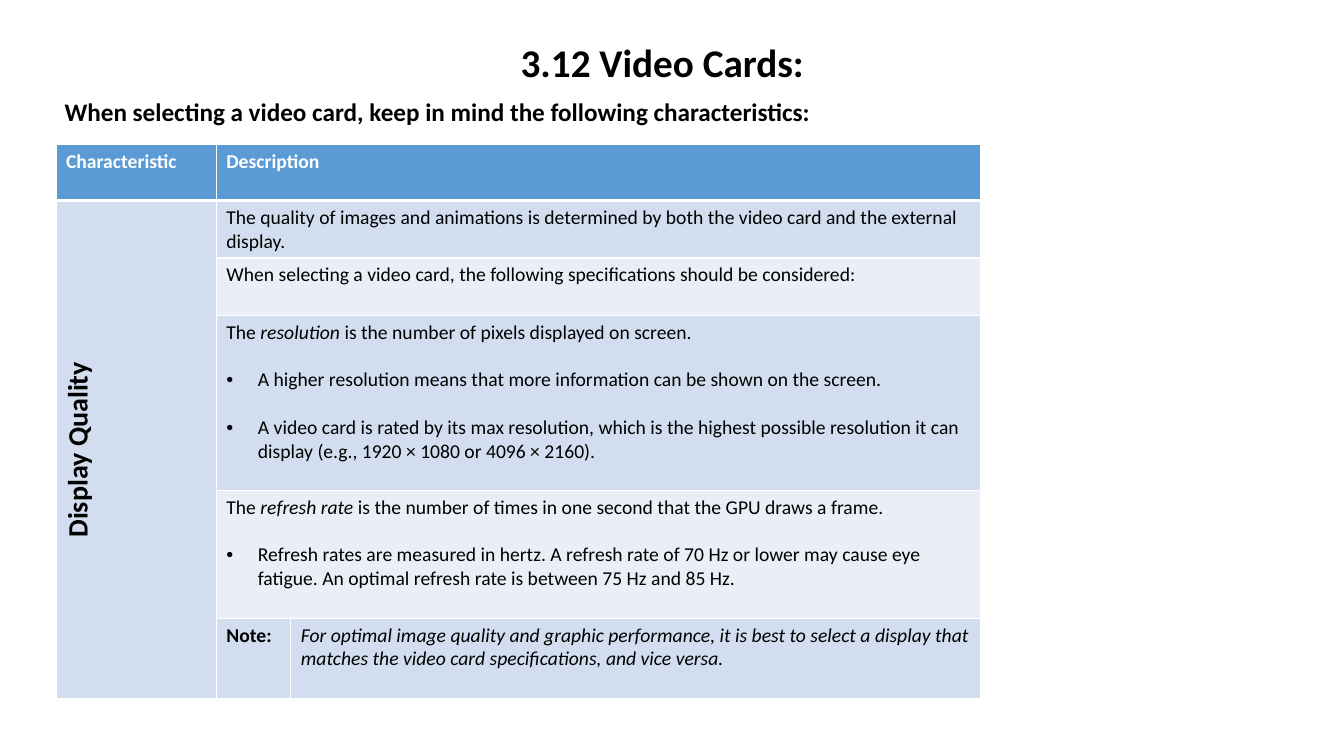
from dataclasses import dataclass

from lxml import etree
from pptx import Presentation
from pptx.dml.color import RGBColor
from pptx.enum import text as t
from pptx.oxml import ns
from pptx.util import Pt


@dataclass(frozen=True)
class Theme:
    font: str = "Calibri"
    ink: str = "000000"
    white: str = "FFFFFF"
    head: str = "5B9BD5"
    dark: str = "D2DEEF"
    light: str = "EAEFF7"
    title: int = 28
    side: int = 20
    lead: int = 18
    body: int = 14


THEME = Theme()
COLS = (114.5, 53.3, 492.7)
ROWS = (40, 41, 41, 125, 91.5, 57.5)
INDENT = 22.5
GAP = 17

# Each paragraph is a list of (text, style) runs; style holds "b" and "i".
INTRO = (
    "The quality of images and animations is determined by both the video card "
    "and the external display.",
    "When selecting a video card, the following specifications should be considered:",
)
SPECS = (
    ([("The ", ""), ("resolution", "i"),
      (" is the number of pixels displayed on screen.", "")],
     ["A higher resolution means that more information can be shown on the screen.",
      "A video card is rated by its max resolution, which is the highest possible "
      "resolution it can display (e.g., 1920 × 1080 or 4096 × 2160)."]),
    ([("The ", ""), ("refresh rate", "i"),
      (" is the number of times in one second that the GPU draws a frame.", "")],
     ["Refresh rates are measured in hertz. A refresh rate of 70 Hz or lower may "
      "cause eye fatigue. An optimal refresh rate is between 75 Hz and 85 Hz."]),
)
NOTE = ("For optimal image quality and graphic performance, it is best to select a "
        "display that matches the video card specifications, and vice versa.")


def add_runs(para, runs, size, color=THEME.ink):
    for words, style in runs:
        run = para.add_run()
        run.text = words
        font = run.font
        font.name, font.size = THEME.font, Pt(size)
        font.bold, font.italic = "b" in style, "i" in style
        font.color.rgb = RGBColor.from_string(color)


def add_label(slide, box, words, size, align, wrap):
    frame = slide.shapes.add_textbox(*map(Pt, box)).text_frame
    frame.word_wrap = wrap
    para = frame.paragraphs[0]
    para.alignment = align
    add_runs(para, [(words, "b")], size)


def add_bullet(frame, words):
    para = frame.add_paragraph()
    props = para._p.get_or_add_pPr()
    props.set("marL", str(Pt(INDENT)))
    props.set("indent", str(-Pt(INDENT)))
    etree.SubElement(props, ns.qn("a:buFont"), typeface="Arial")
    etree.SubElement(props, ns.qn("a:buChar"), char="•")
    para.space_before = Pt(GAP)
    add_runs(para, [(words, "")], THEME.body)


def set_edges(cell, base):
    """Draw white edges, with the bottom one base points wide."""
    props = cell._tc.get_or_add_tcPr()
    for spot, (side, width) in enumerate(zip("LRTB", (1, 1, 1, base))):
        line = etree.Element(ns.qn(f"a:ln{side}"), w=str(Pt(width)))
        fill = etree.SubElement(line, ns.qn("a:solidFill"))
        etree.SubElement(fill, ns.qn("a:srgbClr"), val=THEME.white)
        props.insert(spot, line)


def add_grid(slide):
    """Add the empty table with its fills, edges and merged cells."""
    grid = slide.shapes.add_table(
        len(ROWS), len(COLS), Pt(40), Pt(103.3), Pt(sum(COLS)), Pt(sum(ROWS))).table
    grid.first_row = grid.horz_banding = False
    for col, width in zip(grid.columns, COLS):
        col.width = Pt(width)
    for num, (row, height) in enumerate(zip(grid.rows, ROWS)):
        row.height = Pt(height)
        for col, cell in enumerate(row.cells):
            band = THEME.dark if num % 2 or col == 0 else THEME.light
            cell.fill.solid()
            cell.fill.fore_color.rgb = RGBColor.from_string(band if num else THEME.head)
            set_edges(cell, 1 if num else 3)
    grid.cell(1, 0).merge(grid.cell(5, 0))
    for num in range(5):
        grid.cell(num, 1).merge(grid.cell(num, 2))
    return grid


def fill_cell(cell, runs, size=THEME.body, color=THEME.ink):
    add_runs(cell.text_frame.paragraphs[0], runs, size, color)


def fill_side(cell):
    fill_cell(cell, [("Display Quality", "b")], THEME.side)
    cell.text_frame.paragraphs[0].alignment = t.PP_ALIGN.CENTER
    cell.vertical_anchor = t.MSO_ANCHOR.MIDDLE
    cell._tc.get_or_add_tcPr().set("vert", "vert270")


def main():
    deck = Presentation()
    deck.slide_width, deck.slide_height = Pt(960), Pt(540)
    slide = deck.slides.add_slide(deck.slide_layouts[6])
    add_label(slide, (363, 24, 220, 41), "3.12 Video Cards:",
              THEME.title, t.PP_ALIGN.CENTER, False)
    add_label(slide, (39, 65, 896, 29),
              "When selecting a video card, keep in mind the following characteristics:",
              THEME.lead, t.PP_ALIGN.LEFT, True)

    grid = add_grid(slide)
    for col, words in enumerate(("Characteristic", "Description")):
        fill_cell(grid.cell(0, col), [(words, "b")], color=THEME.white)
    fill_side(grid.cell(1, 0))
    for num, words in enumerate(INTRO, 1):
        fill_cell(grid.cell(num, 1), [(words, "")])
    for num, (runs, points) in enumerate(SPECS, 3):
        cell = grid.cell(num, 1)
        fill_cell(cell, runs)
        for words in points:
            add_bullet(cell.text_frame, words)
    fill_cell(grid.cell(5, 1), [("Note:", "b")])
    fill_cell(grid.cell(5, 2), [(NOTE, "i")])
    deck.save("out.pptx")


if __name__ == "__main__":
    main()
